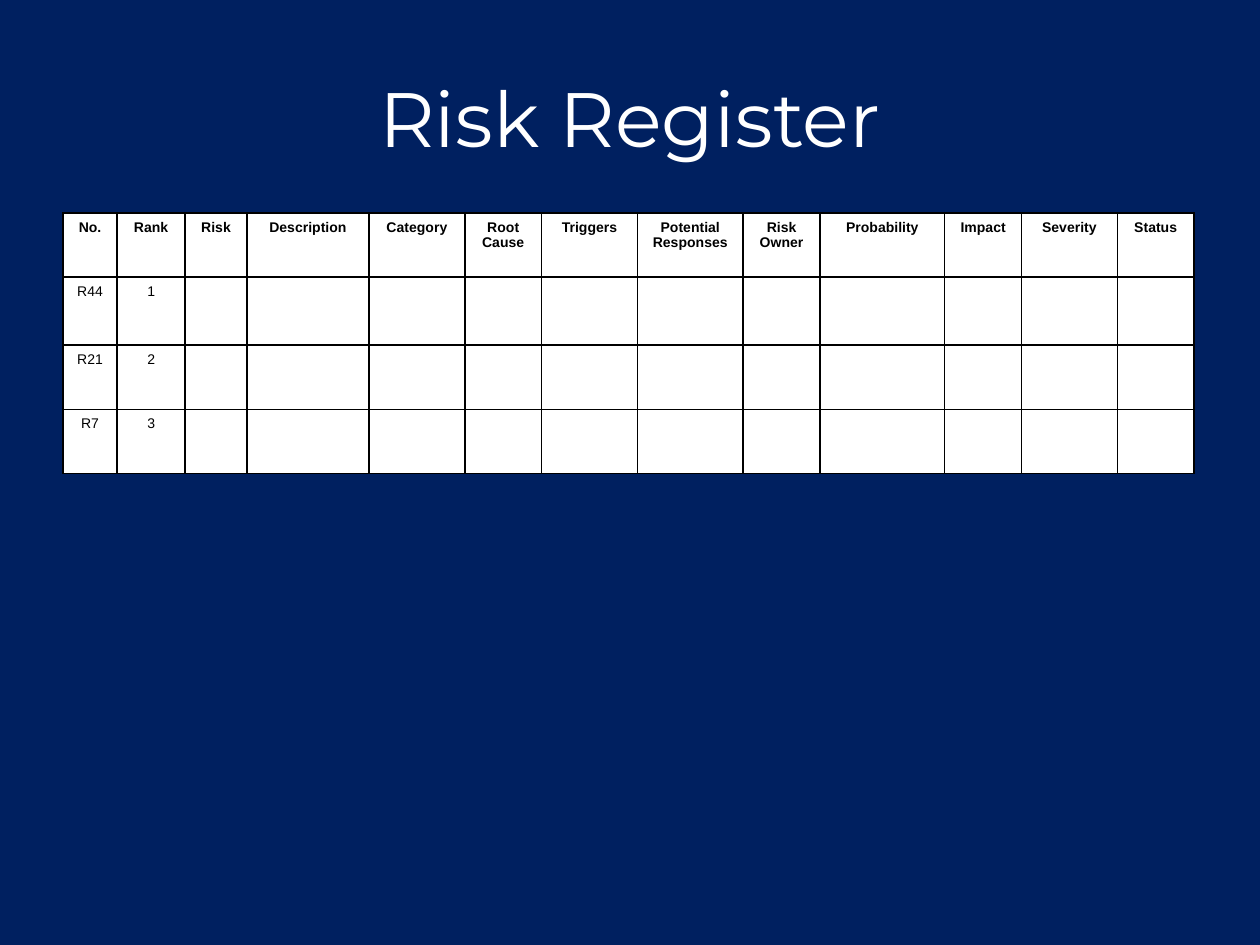
from lxml.etree import SubElement
from pptx import Presentation
from pptx.dml.color import RGBColor
from pptx.enum.text import MSO_ANCHOR as Anchor, PP_ALIGN as Align
from pptx.oxml.ns import qn
from pptx.util import Inches, Pt

NAVY = RGBColor(0x00, 0x20, 0x60)
WHITE = RGBColor(0xFF, 0xFF, 0xFF)
BLACK = RGBColor(0x00, 0x00, 0x00)

TITLE_FONT = {"name": "Montserrat", "size": Pt(44), "bold": False}
HEADER_FONT = {"name": "Arial", "size": Pt(8), "bold": True}
BODY_FONT = {**HEADER_FONT, "bold": False}

# Each column has its header and its width in inches
COLUMNS = [
    ("No.", 0.43), ("Rank", 0.54), ("Risk", 0.49), ("Description", 0.97),
    ("Category", 0.76), ("Root\nCause", 0.61), ("Triggers", 0.76),
    ("Potential\nResponses", 0.84), ("Risk\nOwner", 0.61),
    ("Probability", 0.99), ("Impact", 0.61), ("Severity", 0.76),
    ("Status", 0.61),
]
RISKS = [("R44", "1"), ("R21", "2"), ("R7", "3")]
ROW_HEIGHTS = [0.51, 0.54, 0.51, 0.51]


def format_text(text_frame, font_values, color):
    for paragraph in text_frame.paragraphs:
        paragraph.alignment = Align.CENTER
        for name, value in font_values.items():
            setattr(paragraph.font, name, value)
        for run in paragraph.runs:
            for name, value in font_values.items():
                setattr(run.font, name, value)
            run.font.color.rgb = color


def add_borders(cell, color):
    properties = cell._tc.get_or_add_tcPr()
    for side in ("a:lnL", "a:lnR", "a:lnT", "a:lnB"):
        line = SubElement(properties, qn(side), w=str(Pt(1)))
        fill = SubElement(line, qn("a:solidFill"))
        SubElement(fill, qn("a:srgbClr"), val=str(color))


# Slide and background
presentation = Presentation()
presentation.slide_width = Inches(10)
presentation.slide_height = Inches(7.5)
slide = presentation.slides.add_slide(presentation.slide_layouts[6])
slide.background.fill.solid()
slide.background.fill.fore_color.rgb = NAVY

margin = presentation.slide_width // 20
content_width = presentation.slide_width - 2 * margin

# Title
title = slide.shapes.add_textbox(
    margin, Inches(0.3), content_width, presentation.slide_height // 6)
title.text_frame.word_wrap = True
title.text_frame.vertical_anchor = Anchor.MIDDLE
title.text_frame.text = "Risk Register"
format_text(title.text_frame, TITLE_FONT, WHITE)

# Risk table
table = slide.shapes.add_table(
    len(ROW_HEIGHTS), len(COLUMNS), margin, Inches(1.69),
    content_width, Inches(sum(ROW_HEIGHTS))).table
table.first_row = table.horz_banding = False
for column, (_, width) in zip(table.columns, COLUMNS):
    column.width = Inches(width)
for row, height in zip(table.rows, ROW_HEIGHTS):
    row.height = Inches(height)

# Cell texts, borders and fills
texts = [[header for header, _ in COLUMNS], *RISKS]
for row_index, row_texts in enumerate(texts):
    font_values = BODY_FONT if row_index else HEADER_FONT
    for column_index in range(len(COLUMNS)):
        cell = table.cell(row_index, column_index)
        add_borders(cell, BLACK)
        cell.fill.solid()
        cell.fill.fore_color.rgb = WHITE
        if column_index < len(row_texts):
            cell.text = row_texts[column_index]
            format_text(cell.text_frame, font_values, BLACK)

presentation.save("out.pptx")
